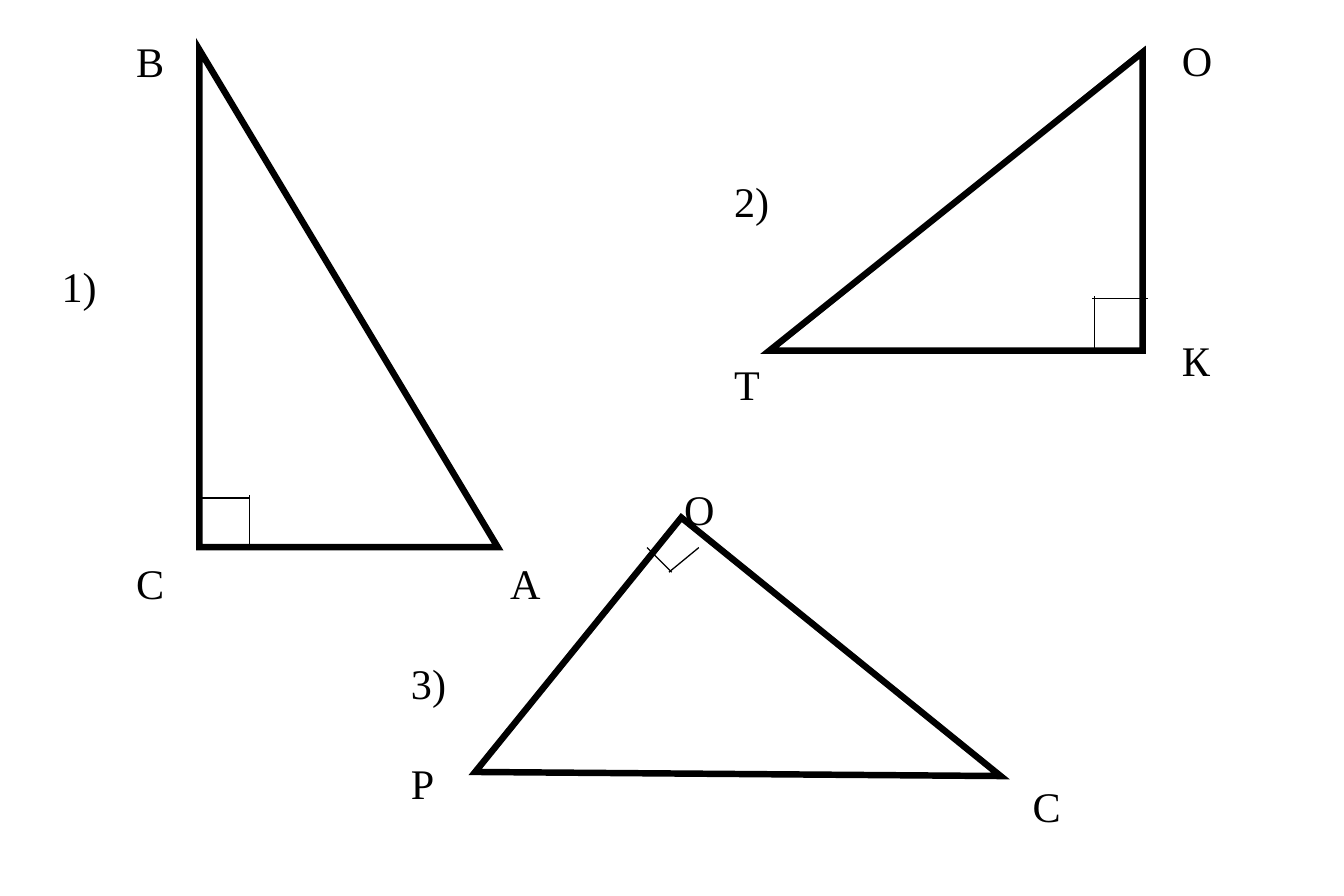
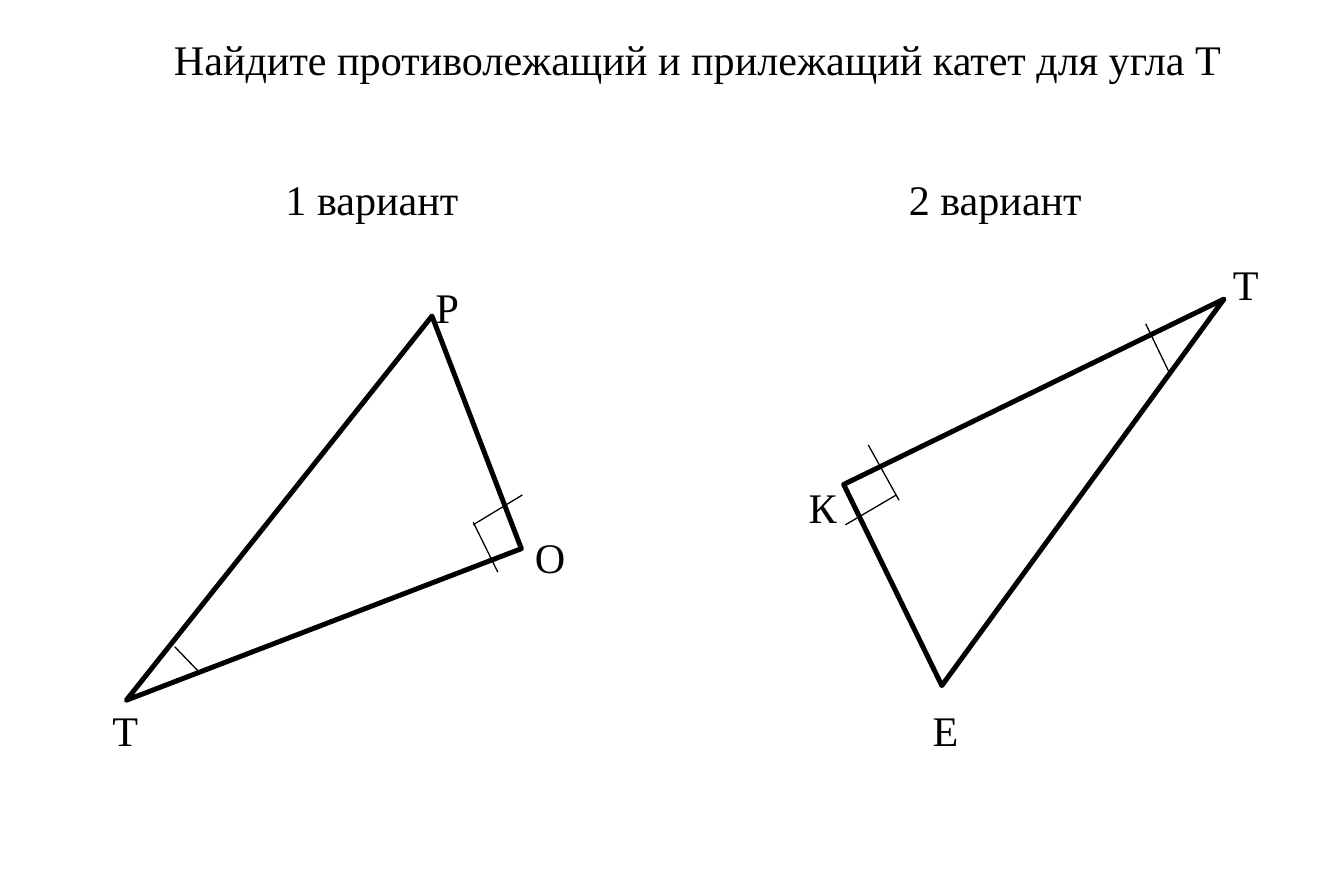
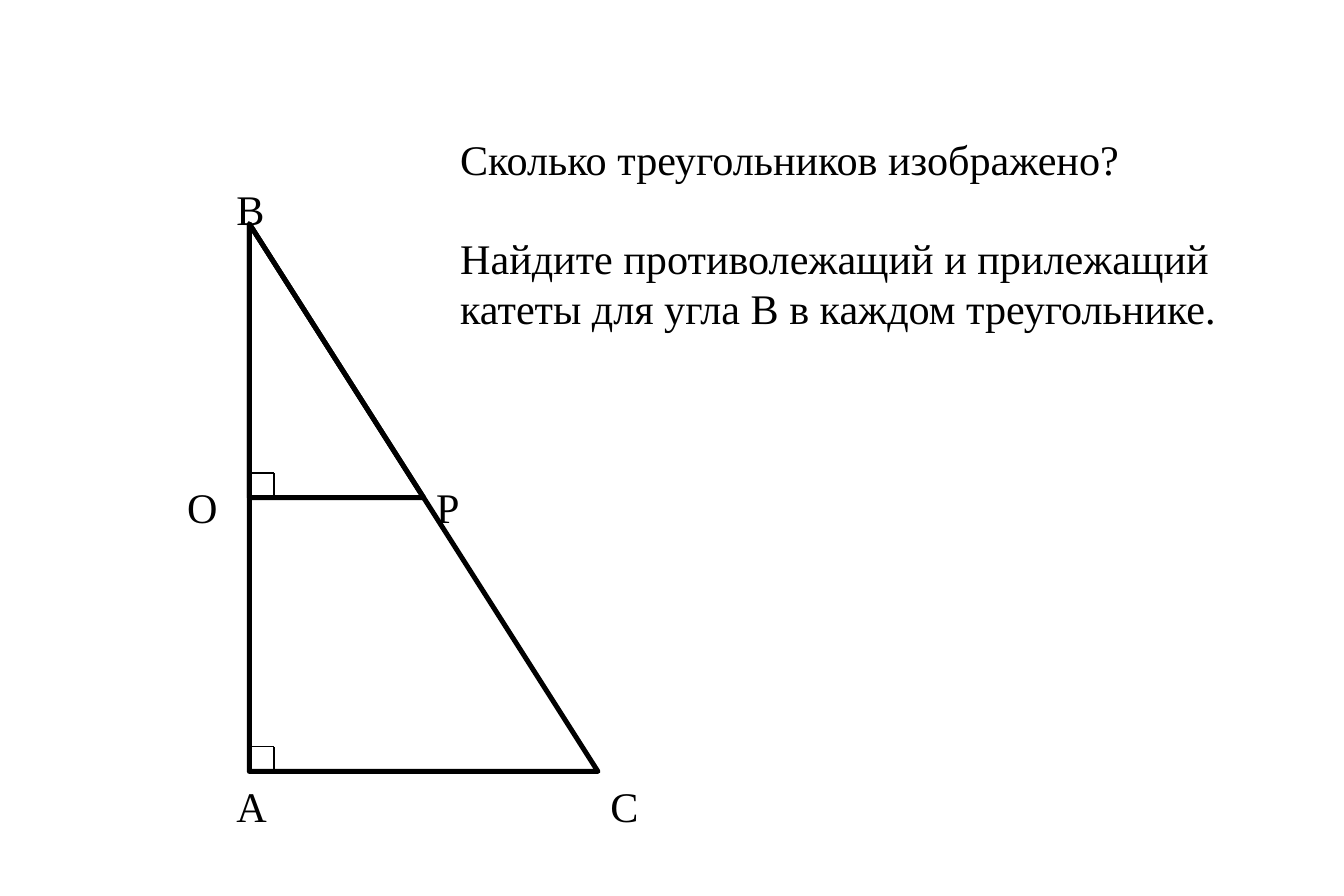
from lxml import etree
from pptx import Presentation
from pptx.dml.color import RGBColor
from pptx.enum import shapes, text
from pptx.oxml import ns
from pptx.util import Pt

FONT, SIZE, INK = "Times New Roman", 24, "000000"
THIN = 0.75
LEFT, JUSTIFY, CENTER = (text.PP_ALIGN.LEFT, text.PP_ALIGN.JUSTIFY,
                         text.PP_ALIGN.CENTER)


def color(hex_code):
    return RGBColor.from_string(hex_code)


def add_text(s, x, y, w, h, *lines, aligns=(LEFT,), top=5, gap=0):
    """Place one paragraph per line, with gap points between paragraphs."""
    tf = s.shapes.add_textbox(Pt(x), Pt(y), Pt(w), Pt(h)).text_frame
    tf.word_wrap = True
    tf.margin_left = tf.margin_right = Pt(7.2)
    tf.margin_top, tf.margin_bottom = Pt(top), Pt(3.6)
    for i, line in enumerate(lines):
        p = tf.paragraphs[0] if i == 0 else tf.add_paragraph()
        p.alignment = aligns[i]
        if i:
            p.space_before = Pt(gap)
        r = p.add_run()
        r.text = line
        r.font.name, r.font.size = FONT, Pt(SIZE)
        r.font.color.rgb = color(INK)


def add_line(s, x1, y1, x2, y2):
    c = s.shapes.add_connector(shapes.MSO_CONNECTOR.STRAIGHT,
                               Pt(x1), Pt(y1), Pt(x2), Pt(y2))
    c.line.width = Pt(THIN)
    c.line.color.rgb = color(INK)
    etree.SubElement(c._element.spPr, ns.qn("a:effectLst"))


def add_triangle(s, x, y, w, h, rot=0, width=2.83, join="round"):
    sp = s.shapes.add_shape(shapes.MSO_SHAPE.RIGHT_TRIANGLE,
                            Pt(x), Pt(y), Pt(w), Pt(h))
    sp.rotation = rot
    sp.shadow.inherit = False
    sp.fill.background()
    sp.line.width = Pt(width)
    sp.line.color.rgb = color(INK)
    etree.SubElement(sp.line._get_or_add_ln(), ns.qn("a:" + join))


def add_figure(s, box, marks, labels, top=5, **style):
    """Draw a triangle; marks and labels are offsets from the box corner."""
    x, y = box[:2]
    add_triangle(s, *box, **style)
    for x1, y1, x2, y2 in marks:
        add_line(s, x + x1, y + y1, x + x2, y + y2)
    for label, dx, dy in labels:
        add_text(s, x + dx, y + dy, 42, 28, label, top=top)


def corner_marks(h, side=14):
    """Right-angle sign at the lower left corner of a box of height h."""
    return [(0, h - side, side, h - side), (side, h - side, side, h)]


def three_triangles(s):
    bold = dict(width=3.69, join="miter", top=5.8)
    add_figure(s, (113.5, 28.3, 170, 283.5),
               [(0, 255.5, 28.5, 255.5), (28.5, 285, 28.5, 253.5)],
               [("С", -43, 283.5), ("А", 170, 283.5), ("В", -43, -14),
                ("1)", -85.5, 114)], **bold)
    add_figure(s, (459.5, 8.5, 170, 212.5),
               [(164, 191.5, 164, 160), (194.3, 161.5, 162.5, 161.5)],
               [("К", 206.5, 176), ("Т", -48.5, 190), ("О", 206.5, 5.5),
                ("2)", -48.5, 85.5)], rot=270, **bold)
    add_figure(s, (327, 324, 186.5, 234),
               [(41.5, -12, 55.5, 2), (71, -12, 54, 2)],
               [("О", 55.5, -54.5), ("Р", -100, 101.5), ("С", 254, 115),
                ("3)", -100, 45)], rot=129, **bold)


def two_variants(s):
    add_text(s, 57, 14.2, 680.5, 70.5,
             "Найдите противолежащий и прилежащий катет для угла Т",
             aligns=(CENTER,))
    for x, heading in ((155.5, "1 вариант"), (510.5, "2 вариант")):
        add_text(s, x, 93.6, 160, 34, heading)
    add_figure(s, (88, 169, 142, 241),
               [(181.5, 128.5, 195.5, 157), (181.5, 130, 209.5, 113),
                (11.5, 199.5, 25, 213.5)],
               [("Т", -31, 227.5), ("Р", 153, -13.5), ("О", 209.5, 128.5)],
               rot=249)
    add_figure(s, (553, 160, 127.5, 241),
               [(-71.5, 139, -42.5, 122), (-41, 125, -58.5, 93.5),
                (99.5, 24.5, 113, 52.5)],
               [("К", -99.5, 109.5), ("Е", -29, 236.5), ("Т", 142, -18)],
               rot=64)


def nested_triangles(s):
    x, y, w, h = 142, 127.5, 198.5, 312
    add_figure(s, (x, y, w, h), corner_marks(h),
               [("А", -14.5, h), ("В", -14.5, -28), ("С", w, h)])
    add_figure(s, (x, y, w / 2, h / 2), corner_marks(h / 2),
               [("О", -42.5, 142), ("Р", w / 2, 142)])
    add_text(s, 255, 70.8, 453.5, 241,
             "Сколько треугольников изображено?",
             "Найдите противолежащий и прилежащий катеты для угла В "
             "в каждом треугольнике.",
             aligns=(JUSTIFY, LEFT), gap=27.6)


def main():
    prs = Presentation()
    prs.slide_width, prs.slide_height = Pt(765.4), Pt(510.5)
    for build in (three_triangles, two_variants, nested_triangles):
        build(prs.slides.add_slide(prs.slide_layouts[6]))
    prs.save("out.pptx")


if __name__ == "__main__":
    main()
